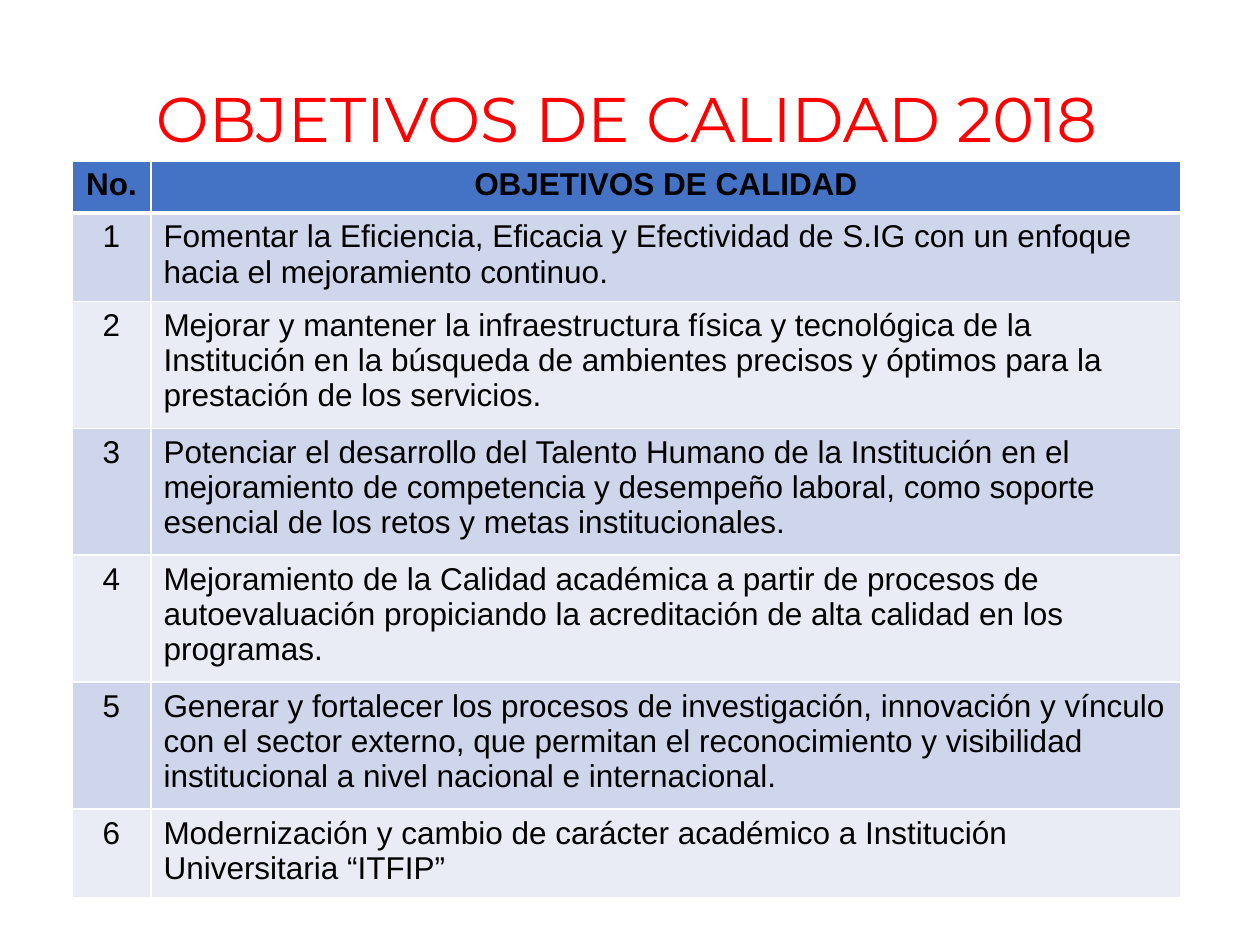
from lxml.etree import SubElement
from pptx import Presentation
from pptx.dml.color import RGBColor
from pptx.enum.text import MSO_AUTO_SIZE, PP_ALIGN
from pptx.oxml import parse_xml
from pptx.oxml.ns import nsdecls
from pptx.util import Emu, Pt

PX_PER_INCH = 126
RED = RGBColor(0xFF, 0x00, 0x00)
BLACK = RGBColor(0x00, 0x00, 0x00)
WHITE = RGBColor(0xFF, 0xFF, 0xFF)
BLUE = RGBColor(0x44, 0x72, 0xC4)
BANDS = (RGBColor(0xCF, 0xD5, 0xEA), RGBColor(0xE9, 0xEB, 0xF5))

TITLE_FONT = {"name": "Montserrat", "size": Pt(36)}
HEADER_FONT = {"name": "Arial", "size": Pt(18), "bold": True}
BODY_FONT = {"name": "Arial", "size": Pt(18), "bold": False}

COLUMN_WIDTHS = (79, 1030)
ROW_HEIGHTS = (52, 88, 127, 127, 127, 127, 88)
HEADERS = ("No.", "OBJETIVOS DE CALIDAD")
OBJECTIVES = (
    "Fomentar la Eficiencia, Eficacia y Efectividad de S.IG con un enfoque hacia el mejoramiento continuo.",
    "Mejorar y mantener la infraestructura física y tecnológica de la Institución en la búsqueda de "
    "ambientes precisos y óptimos para la prestación de los servicios.",
    "Potenciar el desarrollo del Talento Humano de la Institución en el mejoramiento de competencia y "
    "desempeño laboral, como soporte esencial de los retos y metas institucionales.",
    "Mejoramiento de la Calidad académica a partir de procesos de autoevaluación propiciando la "
    "acreditación de alta calidad en los programas.",
    "Generar y fortalecer los procesos de investigación, innovación y vínculo con el sector externo, "
    "que permitan el reconocimiento y visibilidad institucional a nivel nacional e internacional.",
    "Modernización y cambio de carácter académico a Institución Universitaria “ITFIP”",
)


def px(n):
    return Emu(round(n * 914400 / PX_PER_INCH))


def write(tf, text, fmt, color, align):
    p = tf.paragraphs[0]
    p.alignment = align
    r = p.add_run()
    r.text = text
    for name, value in fmt.items():
        setattr(r.font, name, value)
    r.font.color.rgb = color


def add_title(s, text, x, y, w, h):
    tf = s.shapes.add_textbox(px(x), px(y), px(w), px(h)).text_frame
    tf.word_wrap = True
    tf.auto_size = MSO_AUTO_SIZE.SHAPE_TO_FIT_TEXT
    write(tf, text, TITLE_FONT, RED, PP_ALIGN.CENTER)


def set_borders(cell, top, bottom):
    tc_pr = cell._tc.get_or_add_tcPr()
    widths = {"lnL": 1, "lnR": 1, "lnT": top, "lnB": bottom}
    for i, (side, width) in enumerate(widths.items()):
        ln = parse_xml(f'<a:{side} {nsdecls("a")} w="{Pt(width)}"/>')
        fill = SubElement(ln, ln.tag.replace(side, "solidFill"))
        SubElement(fill, ln.tag.replace(side, "srgbClr"), val=str(WHITE))
        tc_pr.insert(i, ln)


def add_objectives_table(s, x, y):
    rows = [HEADERS, *((str(n), text) for n, text in enumerate(OBJECTIVES, 1))]
    table = s.shapes.add_table(
        len(rows), len(HEADERS), px(x), px(y), px(sum(COLUMN_WIDTHS)), px(sum(ROW_HEIGHTS))
    ).table
    for column, width in zip(table.columns, COLUMN_WIDTHS):
        column.width = px(width)
    for i, (values, height) in enumerate(zip(rows, ROW_HEIGHTS)):
        table.rows[i].height = px(height)
        for j, text in enumerate(values):
            cell = table.cell(i, j)
            cell.fill.solid()
            cell.fill.fore_color.rgb = BANDS[(i - 1) % 2] if i else BLUE
            set_borders(cell, 3 if i == 1 else 1, 1 if i else 3)
            align = PP_ALIGN.LEFT if i and j else PP_ALIGN.CENTER
            write(cell.text_frame, text, BODY_FONT if i else HEADER_FONT, BLACK, align)


def main():
    prs = Presentation()
    prs.slide_width, prs.slide_height = px(1260), px(945)
    s = prs.slides.add_slide(prs.slide_layouts[6])
    add_title(s, "OBJETIVOS DE CALIDAD 2018", 86, 73, 1081, 89)
    add_objectives_table(s, 72, 161)
    prs.save("out.pptx")


if __name__ == "__main__":
    main()
